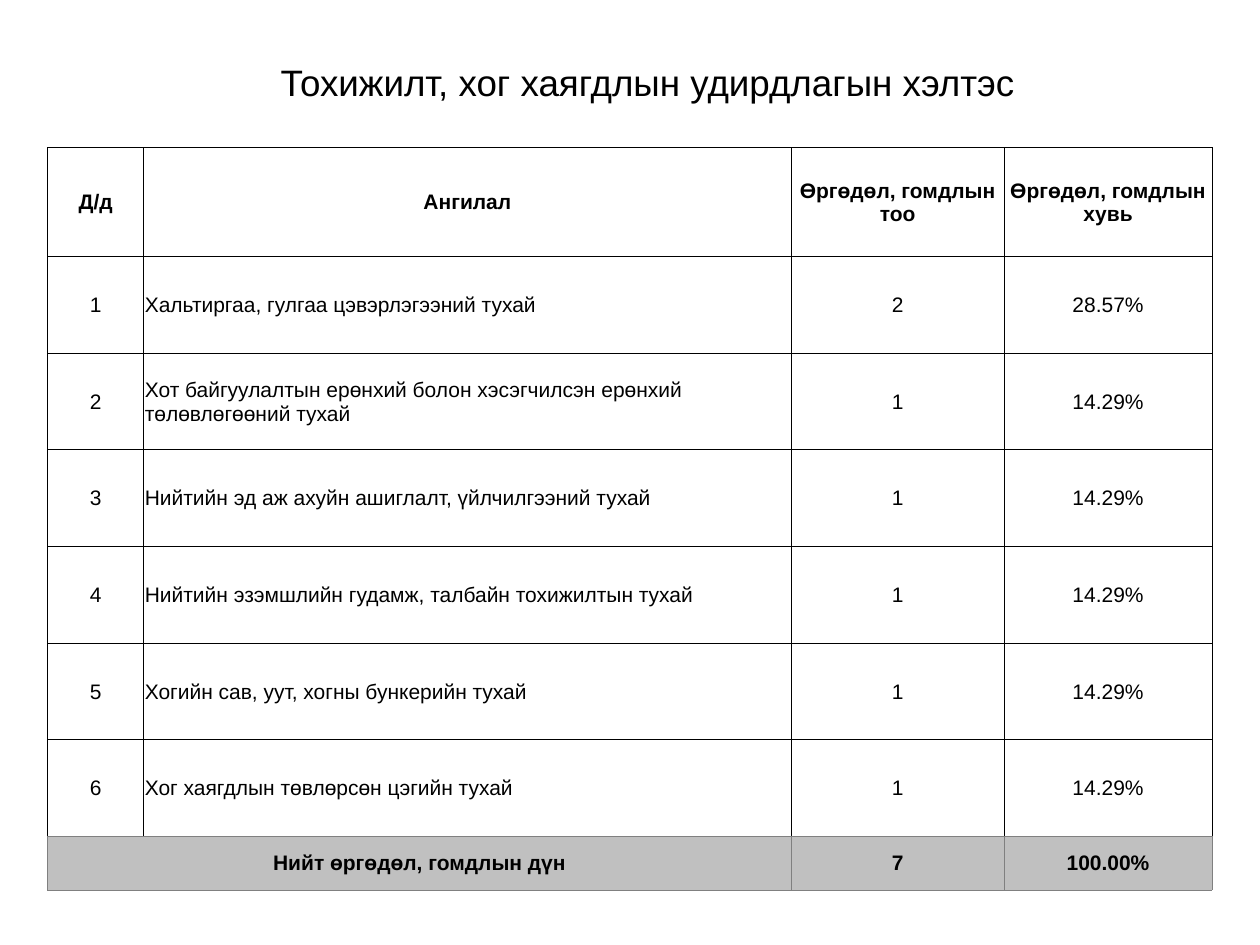
from lxml.etree import SubElement
from pptx import Presentation
from pptx.dml.color import RGBColor
from pptx.enum.text import MSO_ANCHOR, PP_ALIGN
from pptx.oxml.ns import qn
from pptx.util import Inches, Pt

WIDE, HIGH = Inches(10), Inches(7.5)
BLACK, WHITE, GREY, SILVER = "000000", "FFFFFF", "808080", "C0C0C0"
HEAD = ("Д/д", "Ангилал", "Өргөдөл, гомдлын тоо", "Өргөдөл, гомдлын хувь")
ITEMS = (
    ("Хальтиргаа, гулгаа цэвэрлэгээний тухай", "2", "28.57%"),
    ("Хот байгуулалтын ерөнхий болон хэсэгчилсэн ерөнхий төлөвлөгөөний тухай", "1", "14.29%"),
    ("Нийтийн эд аж ахуйн ашиглалт, үйлчилгээний тухай", "1", "14.29%"),
    ("Нийтийн эзэмшлийн гудамж, талбайн тохижилтын тухай", "1", "14.29%"),
    ("Хогийн сав, уут, хогны бункерийн тухай", "1", "14.29%"),
    ("Хог хаягдлын төвлөрсөн цэгийн тухай", "1", "14.29%"),
)
TOTAL = ("Нийт өргөдөл, гомдлын дүн", "", "7", "100.00%")


def color(code):
    """Turn a hex string into a colour."""
    return RGBColor.from_string(code)


def area(left, top, width, height):
    """Turn shares of the slide into lengths."""
    return [round(part * side) for part, side in
            zip((left, top, width, height), (WIDE, HIGH, WIDE, HIGH))]


def write(frame, text, size=12, bold=False, align=PP_ALIGN.CENTER, space=1.0):
    """Put one formatted paragraph into a text frame."""
    line = frame.paragraphs[0]
    line.alignment, line.line_spacing = align, space
    run = line.add_run()
    run.text = text
    font = run.font
    font.name, font.size, font.bold = "Arial", Pt(size), bold
    font.color.rgb = color(BLACK)


def edge(cell, **sides):
    """Draw the borders of a cell in the given colours."""
    props = cell._tc.get_or_add_tcPr()
    for spot, side in enumerate("LRTB"):
        line = props.makeelement(qn(f"a:ln{side}"), {"w": str(Pt(0.5))})
        fill = SubElement(line, qn("a:solidFill"))
        SubElement(fill, qn("a:srgbClr"), val=sides.get(side, BLACK))
        props.insert(spot, line)


def title(slide, box, text):
    """Place the slide title in its box."""
    shape = slide.shapes.title
    shape.left, shape.top, shape.width, shape.height = box
    frame = shape.text_frame
    frame.word_wrap = True
    frame.vertical_anchor = MSO_ANCHOR.MIDDLE
    frame.margin_left = Inches(0.34)
    write(frame, text, size=21, space=0.9)


def table(slide, box, rows, cols, highs):
    """Place the complaint table, with sizes as shares of its box."""
    grid = slide.shapes.add_table(len(rows), len(cols), *box).table
    grid.horz_banding = False
    for col, share in zip(grid.columns, cols):
        col.width = round(box[2] * share / sum(cols))
    for row, share in zip(grid.rows, highs):
        row.height = round(box[3] * share / sum(highs))
    last = len(rows) - 1
    grid.cell(last, 0).merge(grid.cell(last, 1))
    for y, row in enumerate(rows):
        for x, text in enumerate(row):
            cell = grid.cell(y, x)
            cell.margin_left = cell.margin_right = cell.margin_top = Inches(0.01)
            cell.margin_bottom = 0
            cell.vertical_anchor = MSO_ANCHOR.MIDDLE
            cell.fill.solid()
            cell.fill.fore_color.rgb = color(SILVER if y == last else WHITE)
            base = GREY if y >= last - 1 else BLACK
            if y == last:
                edge(cell, L=GREY, R=GREY, T=GREY, B=GREY)
            else:
                edge(cell, B=base)
            if text:
                left = x == 1 and 0 < y < last
                write(cell.text_frame, text, bold=y in (0, last),
                      align=PP_ALIGN.LEFT if left else PP_ALIGN.CENTER)


def main():
    """Build and save the slide."""
    deck = Presentation()
    deck.slide_width, deck.slide_height = WIDE, HIGH
    slide = deck.slides.add_slide(deck.slide_layouts[5])
    title(slide, area(0.04, 0.025, 0.924, 0.13),
          "Тохижилт, хог хаягдлын удирдлагын хэлтэс")
    body = [(str(n), *item) for n, item in enumerate(ITEMS, 1)]
    table(slide, area(0.038, 0.156, 0.924, 0.786), [HEAD, *body, TOTAL],
          cols=(0.76, 5.14, 1.69, 1.65),
          highs=(0.87, *[0.77] * len(body), 0.43))
    deck.save("out.pptx")


if __name__ == "__main__":
    main()
